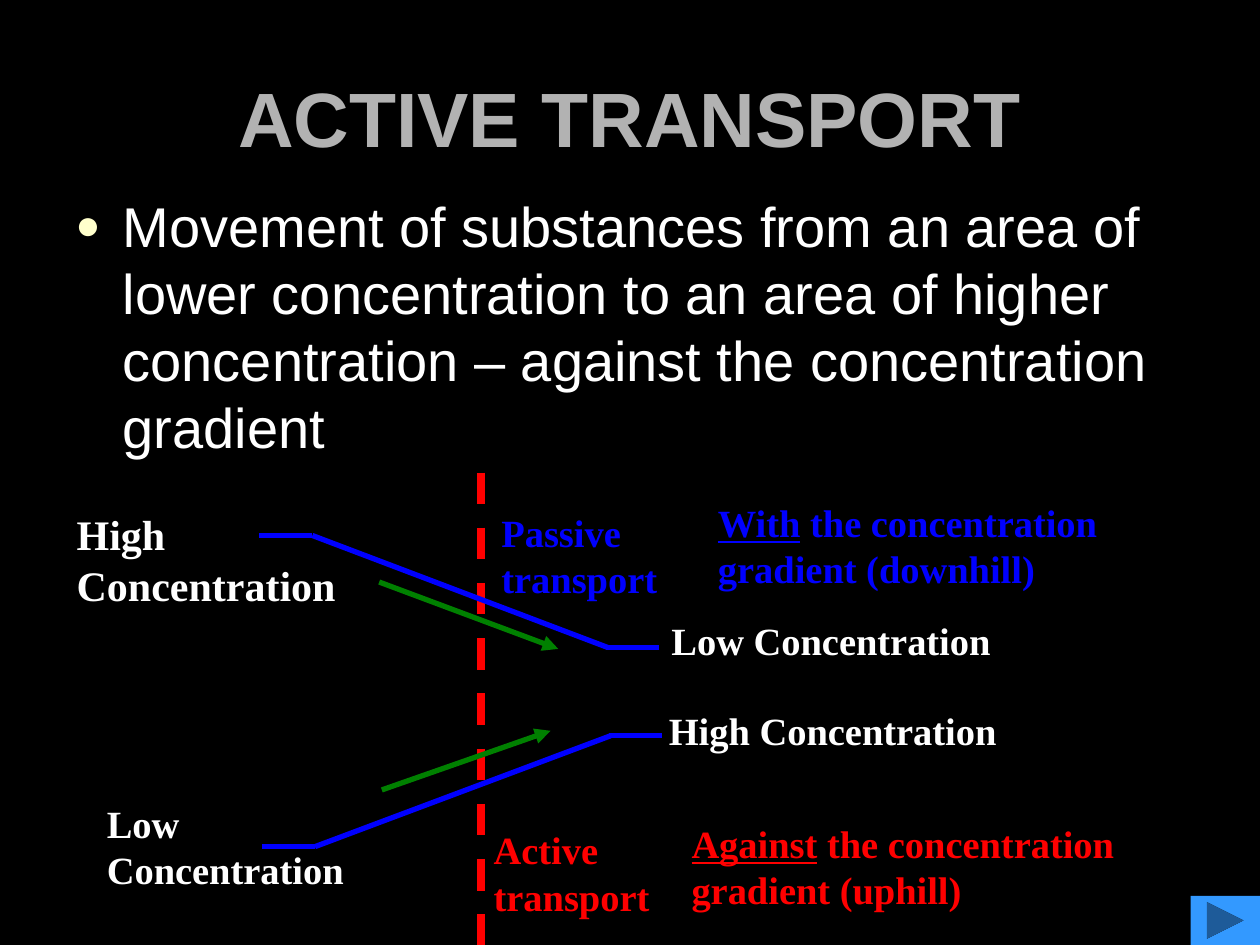
from lxml import etree
from pptx import Presentation
from pptx.dml.color import RGBColor
from pptx.enum.dml import MSO_LINE
from pptx.enum.shapes import MSO_CONNECTOR, MSO_SHAPE
from pptx.enum.text import MSO_ANCHOR, PP_ALIGN
from pptx.oxml.ns import qn
from pptx.util import Pt

STRAIGHT = MSO_CONNECTOR.STRAIGHT
FORWARD_BUTTON = MSO_SHAPE.ACTION_BUTTON_FORWARD_OR_NEXT
DASH = MSO_LINE.DASH
TOP, MIDDLE = MSO_ANCHOR.TOP, MSO_ANCHOR.MIDDLE
LEFT, CENTER = PP_ALIGN.LEFT, PP_ALIGN.CENTER

COLORS = {
    "background": "000000",
    "title": "B2B2B2",
    "text": "FFFFFF",
    "bullet": "FFFFCC",
    "passive": "0000FF",
    "active": "FF0000",
    "membrane": "FF0000",
    "gradient": "0000FF",
    "arrow": "008000",
    "button": "3399FF",
}


def color(name):
    return RGBColor.from_string(COLORS[name])


def add_text(slide, text, box, *, size=22, font="Times New Roman", fill="text",
             bold=True, align=LEFT, anchor=TOP, underlined=""):
    """Add a text box, one paragraph per line; `underlined` leads the text."""
    shape = slide.shapes.add_textbox(*map(Pt, box))
    frame = shape.text_frame
    frame.word_wrap = True
    frame.vertical_anchor = anchor
    for index, line in enumerate(text.split("\n")):
        paragraph = frame.add_paragraph() if index else frame.paragraphs[0]
        paragraph.alignment = align
        for part, underline in ((underlined, True), (line, False)):
            if not part:
                continue
            run = paragraph.add_run()
            run.text = part
            run.font.size = Pt(size)
            run.font.name = font
            run.font.bold = bold
            run.font.underline = underline
            run.font.color.rgb = color(fill)
    return shape


def add_bullet(paragraph, indent):
    paragraph.space_before = Pt(6.4)
    properties = paragraph._p.get_or_add_pPr()
    properties.set("marL", str(Pt(indent)))
    properties.set("indent", str(-Pt(indent)))
    bullet_color = etree.SubElement(properties, qn("a:buClr"))
    etree.SubElement(bullet_color, qn("a:srgbClr"), val=COLORS["bullet"])
    etree.SubElement(properties, qn("a:buSzPct"), val="75000")
    etree.SubElement(properties, qn("a:buFont"), typeface="Arial")
    etree.SubElement(properties, qn("a:buChar"), char="●")


def add_line(slide, start, end, fill, width=3, dash=None, arrow=False):
    connector = slide.shapes.add_connector(STRAIGHT, *map(Pt, (*start, *end)))
    line = connector.line
    line.color.rgb = color(fill)
    line.width = Pt(width)
    if dash is not None:
        line.dash_style = dash
    if arrow:
        etree.SubElement(line._get_or_add_ln(), qn("a:tailEnd"), type="triangle")
    etree.SubElement(connector._element.spPr, qn("a:effectLst"))


def add_gradient(slide, left, start_y, end_y):
    """Draw a slope between two short level ends."""
    level, slope_end = 30.2, 199
    right = left + slope_end
    add_line(slide, (left, start_y), (left + level, start_y), "gradient")
    add_line(slide, (left + level, start_y), (right, end_y), "gradient")
    add_line(slide, (right - 1, end_y), (right - 1 + level, end_y), "gradient")


def add_button(slide, box):
    shape = slide.shapes.add_shape(FORWARD_BUTTON, *map(Pt, box))
    shape.shadow.inherit = False
    shape.fill.solid()
    shape.fill.fore_color.rgb = color("button")
    shape.line.fill.background()


def main():
    presentation = Presentation()
    presentation.slide_width, presentation.slide_height = Pt(720), Pt(540)
    slide = presentation.slides.add_slide(presentation.slide_layouts[6])
    slide.background.fill.solid()
    slide.background.fill.fore_color.rgb = color("background")

    add_text(slide, "ACTIVE TRANSPORT", (36, 21.6, 648, 90), size=44,
             font="Arial", fill="title", align=CENTER, anchor=MIDDLE)
    body = add_text(
        slide,
        "Movement of substances from an area of lower concentration to an area "
        "of higher concentration – against the concentration gradient",
        (36, 105.8, 648, 170), size=32, font="Arial", bold=False)
    add_bullet(body.text_frame.paragraphs[0], 27)

    add_line(slide, (275, 270), (275, 540), "membrane", width=4.5, dash=DASH)
    add_gradient(slide, 148.3, 306, 370)
    add_gradient(slide, 149.8, 483.8, 420.5)

    add_text(slide, "High\nConcentration", (36.7, 287.3, 193, 57), size=24)
    add_text(slide, "High Concentration", (375.1, 400.3, 245.5, 36.7))
    add_text(slide, "Low\nConcentration", (54, 453.6, 177, 73.4))
    add_text(slide, "Low Concentration", (376.6, 349.2, 278, 36.7))

    add_line(slide, (218.2, 451.4), (314.6, 417.6), "arrow", arrow=True)
    add_line(slide, (216.7, 332.6), (319, 370.8), "arrow", arrow=True)

    add_text(slide, "Passive transport", (279.4, 287.3, 118, 45.4), fill="passive")
    add_text(slide, "Active transport", (275, 468.7, 118, 73.4), fill="active")
    add_text(slide, " the concentration gradient (downhill)",
             (403.2, 281.5, 269.3, 59), fill="passive", underlined="With")
    add_text(slide, " the concentration gradient (uphill)",
             (388.1, 465.1, 280.8, 60.5), fill="active", underlined="Against")

    add_button(slide, (680.4, 511.9, 39.6, 28.1))
    presentation.save("out.pptx")


if __name__ == "__main__":
    main()
